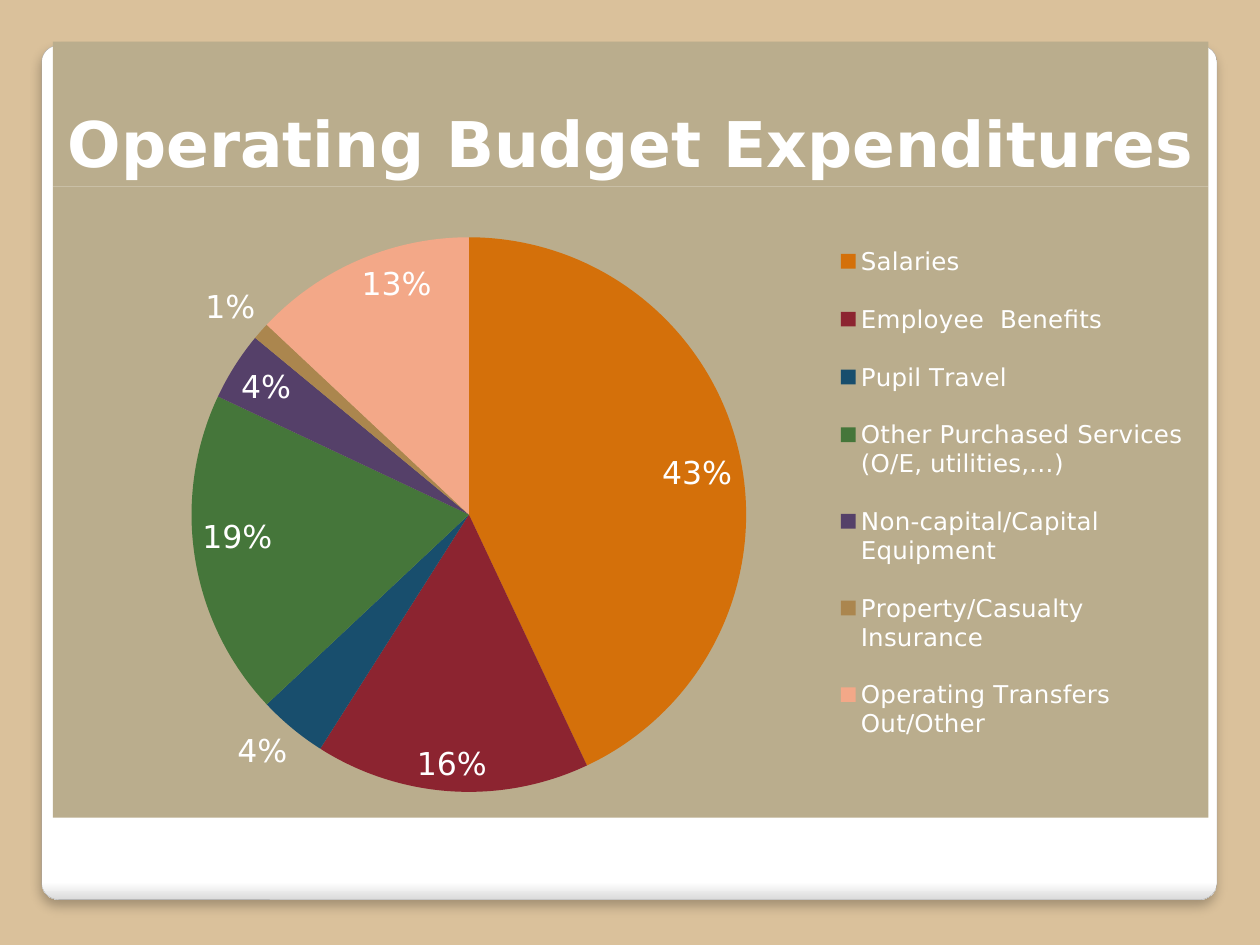
from dataclasses import dataclass
from lxml import etree
from pptx import Presentation
from pptx.chart.data import CategoryChartData as Data
from pptx.dml.color import RGBColor as Rgb
from pptx.enum.chart import XL_CHART_TYPE as Kind, XL_LABEL_POSITION as Spot, XL_LEGEND_POSITION as Side
from pptx.enum.shapes import MSO_SHAPE as Form
from pptx.enum.text import MSO_ANCHOR as Anchor, PP_ALIGN as Align
from pptx.oxml import parse_xml as to_xml
from pptx.oxml.ns import qn
from pptx.util import Inches, Pt


@dataclass(frozen=True)
class Theme:
    font: str = "DejaVu Sans"
    page: str = "DAC19B"
    panel: str = "BAAD8D"
    white: str = "FFFFFF"
    edge: str = "DADADA"
    line: str = "A4A4A4"
    title: int = 36
    label: int = 18
    key: int = 14


ITEMS = [
    ("Salaries", 0.43, "D4700A"),
    ("Employee  Benefits", 0.16, "8C2430"),
    ("Pupil Travel", 0.04, "184E6D"),
    ("Other Purchased Services (O/E, utilities,…)", 0.19, "45763A"),
    ("Non-capital/Capital Equipment", 0.04, "554069"),
    ("Property/Casualty Insurance", 0.01, "AB864E"),
    ("Operating Transfers Out/Other", 0.13, "F3A888"),
]
OUTER = ("Pupil Travel", "Property/Casualty Insurance")
MAIN = "http://schemas.openxmlformats.org/drawingml/2006/main"
SHADE = f"""<a:effectLst xmlns:a="{MAIN}">
<a:outerShdw blurRad="76200" dist="50800" dir="5400000" algn="tl" rotWithShape="0">
<a:srgbClr val="000000"><a:alpha val="25000"/></a:srgbClr></a:outerShdw></a:effectLst>"""


class Deck:
    def __init__(self, theme):
        self.theme = theme
        self.file = Presentation()
        self.file.slide_width, self.file.slide_height = Inches(10), Inches(7.5)
        self.slide = self.file.slides.add_slide(self.file.slide_layouts[6])
        self.paint(self.slide.background.fill, theme.page)

    def paint(self, fill, color):
        fill.solid()
        fill.fore_color.rgb = Rgb.from_string(color)

    def style(self, font, size, bold=False):
        font.name, font.size, font.bold = self.theme.font, Pt(size), bold
        font.color.rgb = Rgb.from_string(self.theme.white)

    def card(self, *box):
        card = self.slide.shapes.add_shape(Form.ROUNDED_RECTANGLE, *map(Inches, box))
        card.adjustments[0] = 0.02
        card.fill.gradient()
        card.fill.gradient_angle = 270
        tones = (0.98, self.theme.white), (1, self.theme.edge)
        for stop, (place, color) in zip(card.fill.gradient_stops, tones):
            stop.position, stop.color.rgb = place, Rgb.from_string(color)
        card.line.color.rgb = Rgb.from_string(self.theme.line)
        card.line.width = Pt(0.16)
        card.element.spPr.append(to_xml(SHADE))

    def title(self, text, *box):
        shape = self.slide.shapes.add_textbox(*map(Inches, box))
        self.paint(shape.fill, self.theme.panel)
        frame = shape.text_frame
        frame.word_wrap, frame.vertical_anchor = True, Anchor.BOTTOM
        frame.margin_left = frame.margin_right = Inches(0.05)
        line = frame.paragraphs[0]
        line.text, line.alignment = text, Align.CENTER
        self.style(line.font, self.theme.title, True)

    def place(self, host, after, inner, *box):
        for old in host.findall(qn("c:layout")):
            host.remove(old)
        layout = etree.Element(qn("c:layout"))
        manual = etree.SubElement(layout, qn("c:manualLayout"))
        pairs = [("layoutTarget", "inner")] if inner else []
        pairs += [("xMode", "edge"), ("yMode", "edge"), *zip("xywh", box)]
        for tag, value in pairs:
            etree.SubElement(manual, qn(f"c:{tag}")).set("val", str(value))
        if after is None:
            host.insert(0, layout)
        else:
            after.addnext(layout)

    def pie(self, items, outer, *box):
        data = Data(number_format="0%")
        data.categories = [name for name, _, _ in items]
        data.add_series("Series 1", [value for _, value, _ in items])
        chart = self.slide.shapes.add_chart(Kind.PIE, *map(Inches, box), data).chart
        chart.has_title = False
        self.style(chart.font, self.theme.label)
        plot = chart.plots[0]
        plot.vary_by_categories = True
        plot.has_data_labels = False
        labels = plot.series[0].data_labels
        labels.show_value, labels.position = True, Spot.INSIDE_END
        labels.number_format, labels.number_format_is_linked = "0%", False
        self.style(labels.font, self.theme.label)
        for spot, (name, _, color) in enumerate(items):
            point = plot.series[0].points[spot]
            self.paint(point.format.fill, color)
            if name in outer:
                self.style(point.data_label.font, self.theme.label)
                point.data_label.position = Spot.OUTSIDE_END
        chart.has_legend = True
        chart.legend.position = Side.RIGHT
        chart.legend.include_in_layout = False
        self.style(chart.legend.font, self.theme.key)
        root = chart.element.find(qn("c:chart"))
        self.place(root.find(qn("c:plotArea")), None, True, 0.12, 0.08, 0.48, 0.88)
        key = root.find(qn("c:legend"))
        self.place(key, key.find(qn("c:legendPos")), False, 0.67, 0.05, 0.32, 0.87)
        back = etree.Element(qn("c:spPr"))
        fill = etree.SubElement(back, qn("a:solidFill"))
        etree.SubElement(fill, qn("a:srgbClr")).set("val", self.theme.panel)
        edge = etree.SubElement(back, qn("a:ln"))
        etree.SubElement(edge, qn("a:noFill"))
        root.addnext(back)


def main():
    deck = Deck(Theme())
    deck.card(0.33, 0.36, 9.33, 6.78)
    deck.title("Operating Budget Expenditures", 0.42, 0.33, 9.17, 1.15)
    deck.pie(ITEMS, OUTER, 0.42, 1.48, 9.17, 5.01)
    deck.file.save("out.pptx")


if __name__ == "__main__":
    main()
